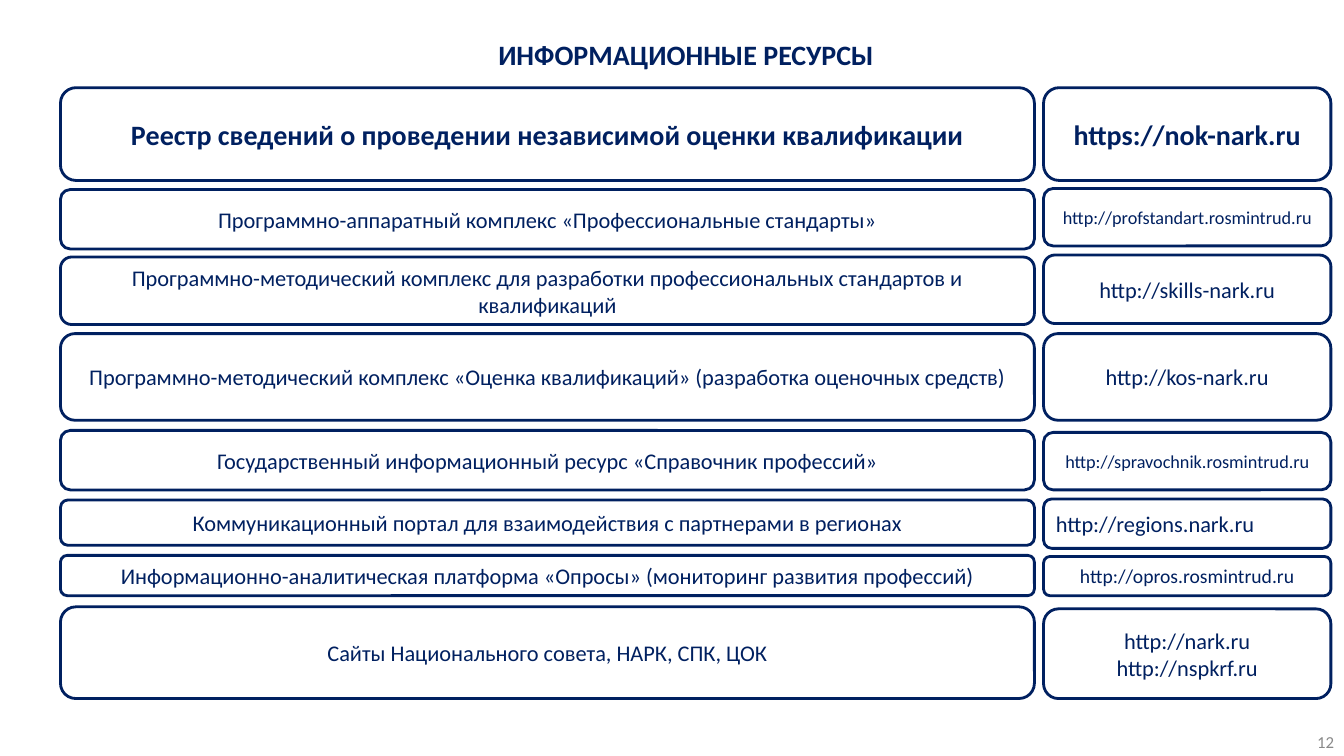
from pptx import Presentation
from pptx.dml.color import RGBColor
from pptx.enum.shapes import MSO_SHAPE as Shape
from pptx.enum.text import MSO_ANCHOR as Anchor, PP_ALIGN as Align
from pptx.util import Inches, Pt

NAVY, WHITE, GRAY = "002060", "FFFFFF", "898989"
NAME_LEFT, NAME_WIDTH = 0.6, 9.66
LINK_LEFT, LINK_WIDTH = 10.35, 2.85

# Each row: name, name top, name height, links, link top, link height, link format
RESOURCES = [
    ("Программно-аппаратный комплекс «Профессиональные стандарты»", 1.88, 0.59,
     ["http://profstandart.rosmintrud.ru"], 1.87, 0.57, {"size": 13}),
    ("Программно-методический комплекс для разработки профессиональных стандартов и квалификаций",
     2.55, 0.67, ["http://skills-nark.ru"], 2.53, 0.68, {}),
    ("Программно-методический комплекс «Оценка квалификаций» (разработка оценочных средств)",
     3.31, 0.86, ["http://kos-nark.ru"], 3.31, 0.86, {}),
    ("Государственный информационный ресурс «Справочник профессий»", 4.27, 0.59,
     ["http://spravochnik.rosmintrud.ru"], 4.29, 0.57, {"size": 13}),
    ("Коммуникационный портал для взаимодействия с партнерами в регионах", 4.96, 0.45,
     ["http://regions.nark.ru"], 4.95, 0.49, {"align": Align.LEFT}),
    ("Информационно-аналитическая платформа «Опросы» (мониторинг развития профессий)",
     5.51, 0.4, ["http://opros.rosmintrud.ru"], 5.52, 0.39, {"size": 14}),
    ("Сайты Национального совета, НАРК, СПК, ЦОК", 6.02, 0.91,
     ["http://nark.ru", "http://nspkrf.ru"], 6.04, 0.89, {}),
]


def color(value):
    """Turn a hex string into a colour."""
    return RGBColor.from_string(value)


def write(box, lines, size=16, bold=False, fill=NAVY, align=Align.CENTER, anchor=Anchor.MIDDLE):
    """Write one paragraph per line into a box."""
    frame = box.text_frame
    frame.word_wrap = True
    frame.vertical_anchor = anchor
    for index, line in enumerate(lines):
        para = frame.add_paragraph() if index else frame.paragraphs[0]
        para.alignment = align
        span = para.add_run()
        span.text = line
        span.font.name = "Calibri"
        span.font.size = Pt(size)
        span.font.bold = bold
        span.font.color.rgb = color(fill)


def add_label(page, left, top, width, height, text, **style):
    """Add a plain text box."""
    box = page.shapes.add_textbox(Inches(left), Inches(top), Inches(width), Inches(height))
    write(box, [text], **style)


def add_card(page, left, top, width, height, lines, **style):
    """Add a white rounded card with a navy outline."""
    card = page.shapes.add_shape(
        Shape.ROUNDED_RECTANGLE, Inches(left), Inches(top), Inches(width), Inches(height))
    card.shadow.inherit = False
    card.fill.solid()
    card.fill.fore_color.rgb = color(WHITE)
    card.line.color.rgb = color(NAVY)
    card.line.width = Pt(2)
    write(card, lines, **style)


def main():
    """Build the slide of information resources."""
    deck = Presentation()
    deck.slide_width, deck.slide_height = Inches(13.33), Inches(7.5)
    page = deck.slides.add_slide(deck.slide_layouts[6])

    add_label(page, 0.91, 0.32, 11.79, 0.44, "ИНФОРМАЦИОННЫЕ РЕСУРСЫ",
              size=20, bold=True, anchor=Anchor.TOP)
    heading = {"size": 20, "bold": True}
    add_card(page, NAME_LEFT, 0.87, NAME_WIDTH, 0.92,
             ["Реестр сведений о проведении независимой оценки квалификации"], **heading)
    add_card(page, LINK_LEFT, 0.87, LINK_WIDTH, 0.92, ["https://nok-nark.ru"], **heading)

    for name, name_top, name_height, links, link_top, link_height, style in RESOURCES:
        add_card(page, NAME_LEFT, name_top, NAME_WIDTH, name_height, [name])
        add_card(page, LINK_LEFT, link_top, LINK_WIDTH, link_height, links, **style)

    add_label(page, 10.22, 7.16, 3.11, 0.4, "12", size=12, fill=GRAY, align=Align.RIGHT)
    deck.save("out.pptx")


if __name__ == "__main__":
    main()
